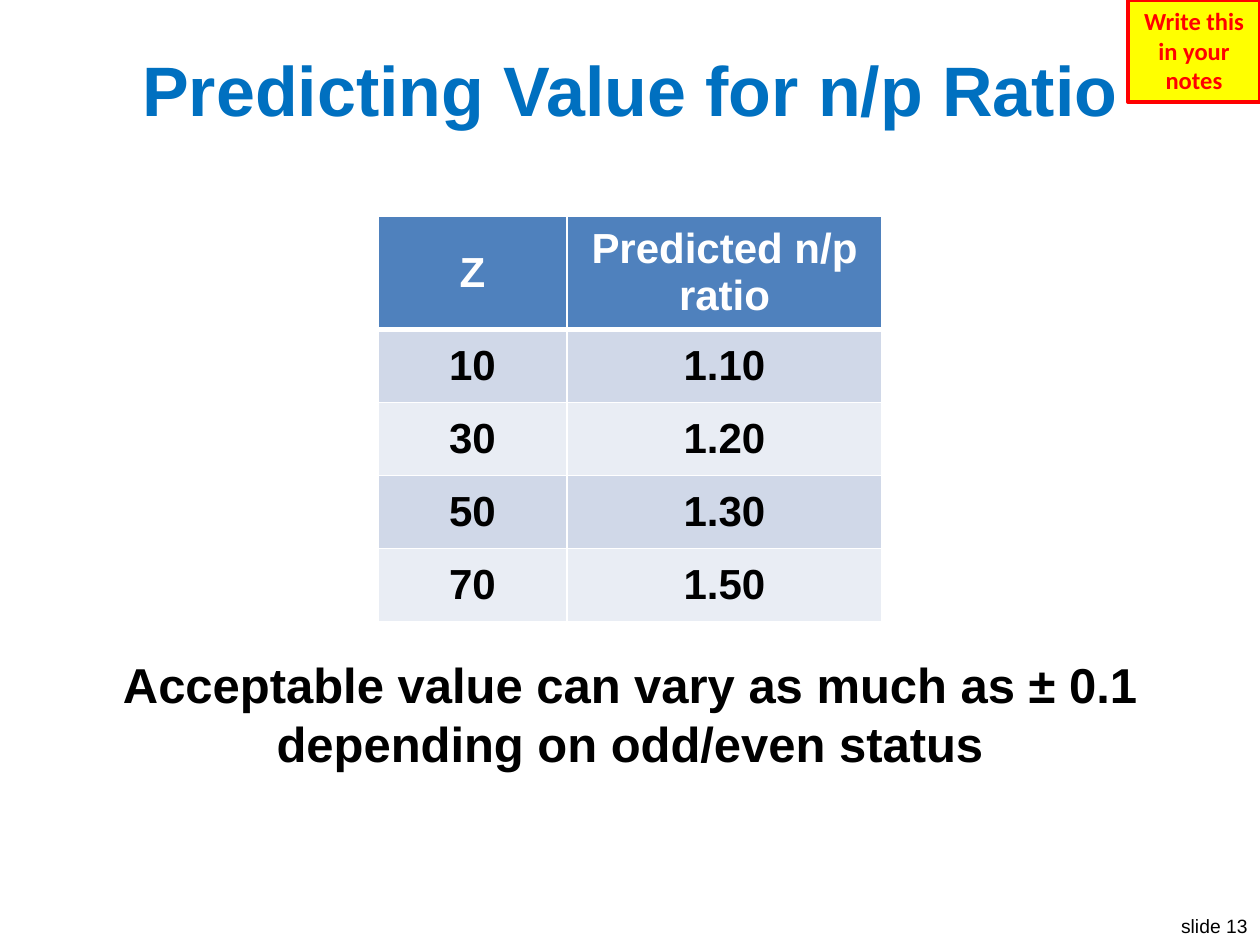
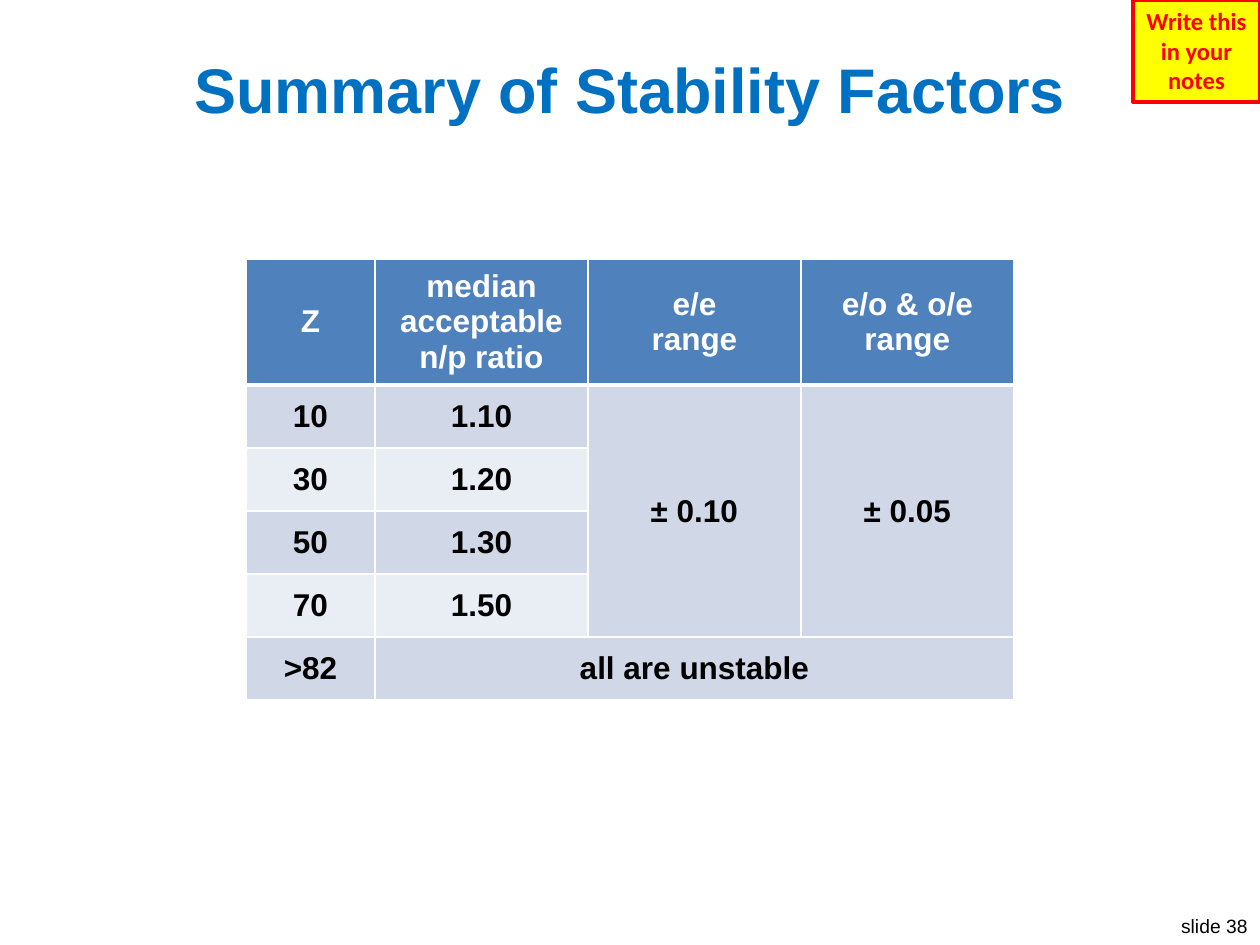
from lxml import etree
from pptx import Presentation
from pptx.dml.color import RGBColor
from pptx.enum.shapes import MSO_SHAPE
from pptx.enum.text import MSO_ANCHOR, MSO_AUTO_SIZE, PP_ALIGN
from pptx.oxml.ns import qn
from pptx.util import Pt

CENTER, RIGHT = PP_ALIGN.CENTER, PP_ALIGN.RIGHT
MIDDLE, TOP = MSO_ANCHOR.MIDDLE, MSO_ANCHOR.TOP
NO_AUTOFIT = MSO_AUTO_SIZE.NONE
RECTANGLE = MSO_SHAPE.RECTANGLE
TITLE_ONLY = 5

SLIDE_WIDTH, SLIDE_HEIGHT = 1260, 945
EMU_PER_PX = 914400 / 126

BLUE, BLACK, WHITE = "0070C0", "000000", "FFFFFF"
RED, YELLOW = "FF0000", "FFFF00"
HEADER_FILL = "4F81BD"
BAND_FILLS = ("D0D8E8", "E9EDF4")


def px(*lengths):
    return [round(length * EMU_PER_PX) for length in lengths]


def color(hex_string):
    return RGBColor.from_string(hex_string)


class Deck:
    """Holds the shared style and the slide being built."""

    def __init__(self):
        self.presentation = Presentation()
        size = px(SLIDE_WIDTH, SLIDE_HEIGHT)
        self.presentation.slide_width, self.presentation.slide_height = size
        self.slide = None

    def set_text(self, frame, text, size, ink, font="Arial", bold=True,
                 align=CENTER, anchor=TOP):
        frame.text = text
        frame.vertical_anchor = anchor
        for paragraph in frame.paragraphs:
            paragraph.alignment = align
            paragraph.font.name = font
            paragraph.font.size = Pt(size)
            paragraph.font.bold = bold
            paragraph.font.color.rgb = color(ink)

    def start_slide(self, title, title_size, number):
        layout = self.presentation.slide_layouts[TITLE_ONLY]
        self.slide = self.presentation.slides.add_slide(layout)
        self.text(f"slide {number}", 1166, 908, 94, 37, 11,
                  bold=False, align=RIGHT)
        shape = self.slide.shapes.title
        shape.left, shape.top, shape.width, shape.height = px(25, 38, 1210, 101)
        shape.text_frame.auto_size = NO_AUTOFIT
        self.set_text(shape.text_frame, title, title_size, BLUE, anchor=MIDDLE)

    def text(self, text, left, top, width, height, size, **style):
        shape = self.slide.shapes.add_textbox(*px(left, top, width, height))
        shape.text_frame.word_wrap = True
        self.set_text(shape.text_frame, text, size, BLACK, **style)

    def note(self, width):
        """Reminder box in the top right corner."""
        shape = self.slide.shapes.add_shape(
            RECTANGLE, *px(SLIDE_WIDTH - width, 0, width, 102))
        shape.shadow.inherit = False
        shape.fill.solid()
        shape.fill.fore_color.rgb = color(YELLOW)
        shape.line.color.rgb = color(RED)
        shape.line.width = Pt(2.25)
        shape.text_frame.word_wrap = True
        self.set_text(shape.text_frame, "Write this in your notes", 14, RED,
                      font="Calibri")

    def table(self, rows, top, column_widths, header_height, row_height,
              size, merges=()):
        """Banded table, centred on the slide; merges are cell corner pairs."""
        width = sum(column_widths)
        height = header_height + row_height * (len(rows) - 1)
        table = self.slide.shapes.add_table(
            len(rows), len(column_widths),
            *px((SLIDE_WIDTH - width) / 2, top, width, height)).table
        for column, column_width in zip(table.columns, px(*column_widths)):
            column.width = column_width
        for index, row in enumerate(table.rows):
            row.height, = px(row_height if index else header_height)

        for row_index, texts in enumerate(rows):
            is_header = row_index == 0
            fill = HEADER_FILL if is_header else BAND_FILLS[(row_index - 1) % 2]
            for column_index in range(len(column_widths)):
                cell = table.cell(row_index, column_index)
                cell.fill.solid()
                cell.fill.fore_color.rgb = color(fill)
                self.borders(cell, top=3 if row_index == 1 else 1,
                             bottom=3 if is_header else 1)
                if column_index < len(texts):
                    self.set_text(cell.text_frame, texts[column_index], size,
                                  WHITE if is_header else BLACK)
                    cell.vertical_anchor = MIDDLE
        for first, last in merges:
            table.cell(*first).merge(table.cell(*last))

    def borders(self, cell, top, bottom):
        properties = cell._tc.get_or_add_tcPr()
        widths = {"a:lnL": 1, "a:lnR": 1, "a:lnT": top, "a:lnB": bottom}
        for position, (tag, width) in enumerate(widths.items()):
            line = etree.Element(qn(tag), w=str(Pt(width)))
            fill = etree.SubElement(line, qn("a:solidFill"))
            etree.SubElement(fill, qn("a:srgbClr"), val=WHITE)
            properties.insert(position, line)


def main():
    deck = Deck()
    ratios = [("10", "1.10"), ("30", "1.20"), ("50", "1.30"), ("70", "1.50")]

    # Predicted ratios
    deck.start_slide("Predicting Value for n/p Ratio", 40, 13)
    deck.table([("Z", "Predicted n/p ratio"), *ratios], top=216,
               column_widths=(189, 315), header_height=105, row_height=73,
               size=24)
    deck.text("Acceptable value can vary as much as ± 0.1\n"
              "depending on odd/even status", 90, 648, 1080, 131, 28)
    deck.note(132)

    # Stability factors
    deck.start_slide("Summary of Stability Factors", 36, 38)
    header = ("Z", "median\nacceptable\nn/p ratio", "e/e\nrange",
              "e/o & o/e\nrange")
    first_ratio, *other_ratios = ratios
    deck.table([header, (*first_ratio, "± 0.10", "± 0.05"), *other_ratios,
                (">82", "all are unstable")], top=259,
               column_widths=(129, 213, 213, 213), header_height=117,
               row_height=63, size=18,
               merges=[((1, 2), (4, 2)), ((1, 3), (4, 3)), ((5, 1), (5, 3))])
    deck.note(127)

    deck.presentation.save("out.pptx")


if __name__ == "__main__":
    main()
